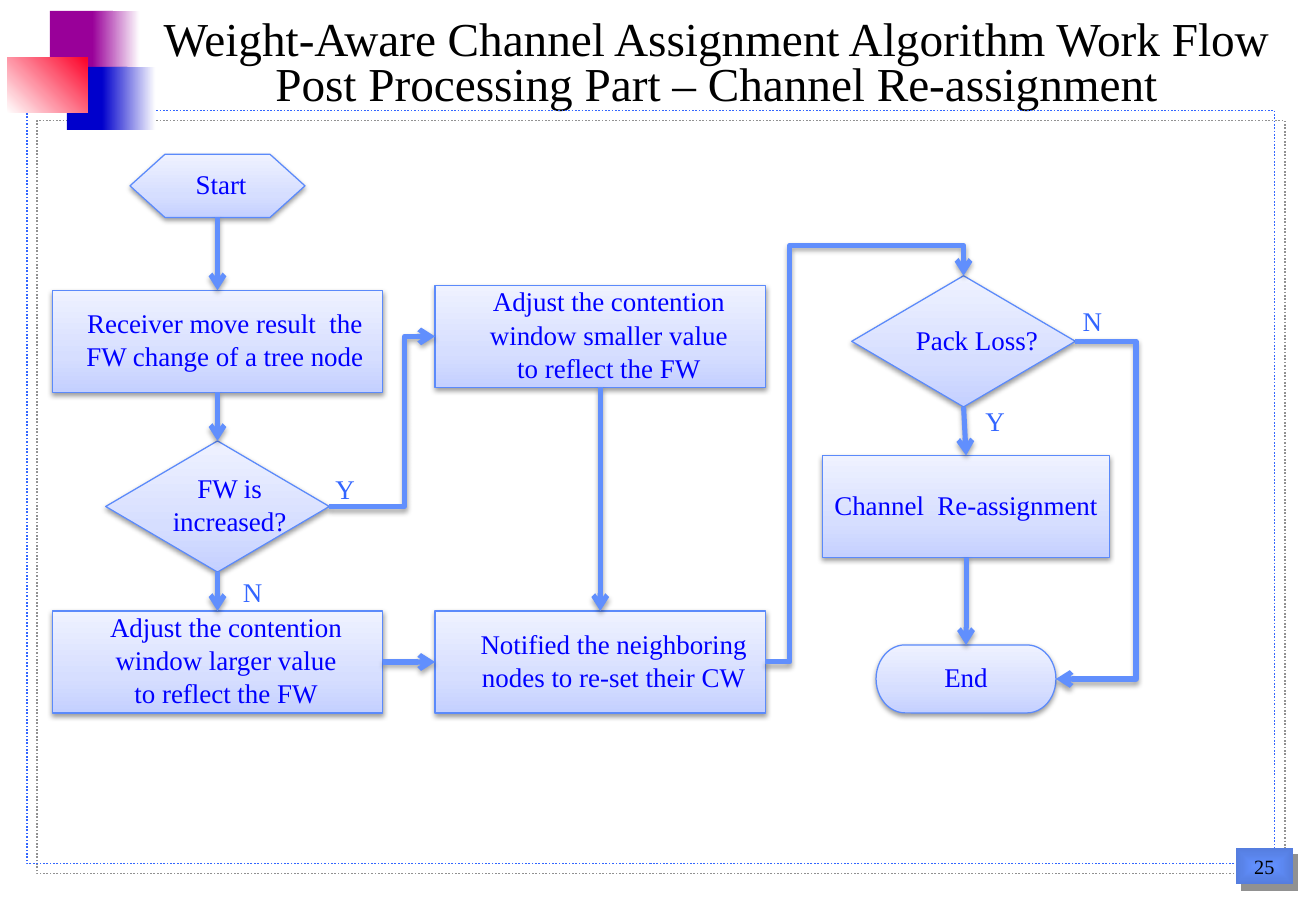
from dataclasses import dataclass

from lxml.etree import SubElement
from pptx import Presentation
from pptx.dml.color import RGBColor
from pptx.enum.dml import MSO_LINE
from pptx.enum.shapes import MSO_CONNECTOR, MSO_SHAPE
from pptx.enum.text import MSO_ANCHOR, MSO_AUTO_SIZE, PP_ALIGN
from pptx.oxml.ns import qn
from pptx.util import Pt

EMU_PER_PX = 9144
TOP, LEFT, BOTTOM, RIGHT = range(4)


@dataclass(frozen=True)
class Theme:
    font: str = "Times New Roman"
    title_size: int = 28
    body_size: int = 16
    number_size: int = 12
    black: str = "000000"
    white: str = "FFFFFF"
    box_text: str = "0000FF"
    label: str = "3366FF"
    box_line: str = "5B8AFB"
    arrow: str = "618FFD"
    badge_edge: str = "557DDE"
    purple: str = "990099"
    navy: str = "0000CC"
    red: str = "FC0128"
    box_fill: tuple = ((0, "C4D0FF"), (35, "D6DEFF"), (100, "EFF2FF"))
    # Shadows: colour, opacity %, blur pt, distance pt, angle
    box_shadow: tuple = ("000000", 38, 3.1, 1.6, 90)
    arrow_shadow: tuple = ("000000", 35, 3.1, 1.8, 90)
    frame_shadow: tuple = ("919191", 100, 0, 8.5, 45)
    badge_shadow: tuple = ("919191", 100, 0, 5, 53)


def px(*lengths):
    return [length * EMU_PER_PX for length in lengths]


def add_color(parent, color):
    return SubElement(parent, qn("a:srgbClr"), val=color)


def fill_gradient(shape, stops, angle=None):
    """Blend the stops along the angle, or out from the centre without one."""
    shape.fill.gradient()
    gradient = shape.element.spPr.find(qn("a:gradFill"))
    gradient.clear()
    stop_list = SubElement(gradient, qn("a:gsLst"))
    for position, color in stops:
        add_color(SubElement(stop_list, qn("a:gs"), pos=str(position * 1000)), color)
    if angle is None:
        centre = SubElement(gradient, qn("a:path"), path="shape")
        SubElement(centre, qn("a:fillToRect"), l="50000", t="50000", r="50000", b="50000")
    else:
        SubElement(gradient, qn("a:lin"), ang=str(angle * 60000), scaled="0")


def add_shadow(effects, color, opacity, blur, distance, angle):
    shadow = SubElement(effects, qn("a:outerShdw"), blurRad=str(Pt(blur)),
                        dist=str(Pt(distance)), dir=str(angle * 60000),
                        algn="ctr", rotWithShape="0")
    SubElement(add_color(shadow, color), qn("a:alpha"), val=str(opacity * 1000))


def write(shape, text, *, font, size, color, spacing=0.9, before=0, shift=0, inset=0):
    """Centre the lines of text, moved right by shift px."""
    frame = shape.text_frame
    frame.word_wrap = False
    frame.auto_size = MSO_AUTO_SIZE.NONE
    frame.vertical_anchor = MSO_ANCHOR.MIDDLE
    frame.margin_left, frame.margin_right = px(inset + 2 * shift, inset)
    frame.margin_top = frame.margin_bottom = 0
    frame.text = text
    for para in frame.paragraphs:
        para.alignment = PP_ALIGN.CENTER
        para.line_spacing = spacing
        para.space_before = Pt(before)
        for span in para.runs:
            span.font.name = font
            span.font.size = Pt(size)
            span.font.color.rgb = RGBColor.from_string(color)


class FlowPage:
    def __init__(self, deck, theme):
        self.theme = theme
        self.page = deck.slides.add_slide(deck.slide_layouts[5])
        self.shapes = self.page.shapes

    def title(self, text, *place):
        title = self.shapes.title
        title.left, title.top, title.width, title.height = px(*place)
        write(title, text, font=self.theme.font, size=self.theme.title_size,
              color=self.theme.black, spacing=0.8)

    def shape(self, kind, place, fill=None, angle=None, line=None, width=0.75, shadow=None):
        """Draw a preset shape; fill is one colour or a series of gradient stops."""
        shape = self.shapes.add_shape(kind, *px(*place))
        if fill is None:
            shape.fill.background()
        elif isinstance(fill, str):
            shape.fill.solid()
            shape.fill.fore_color.rgb = RGBColor.from_string(fill)
        else:
            fill_gradient(shape, fill, angle)
        if line:
            shape.line.color.rgb = RGBColor.from_string(line)
            shape.line.width = Pt(width)
        else:
            shape.line.fill.background()
        shape.shadow.inherit = False
        if shadow:
            add_shadow(shape.element.spPr.find(qn("a:effectLst")), *shadow)
        return shape

    def step(self, kind, place, text, shift=0):
        theme = self.theme
        box = self.shape(kind, place, theme.box_fill, 270, theme.box_line,
                         shadow=theme.box_shadow)
        write(box, text, font=theme.font, size=theme.body_size,
              color=theme.box_text, before=2.4, shift=shift)
        return box

    def label(self, text, left, top):
        box = self.shapes.add_textbox(*px(left, top, 36, 34))
        write(box, text, font=self.theme.font, size=self.theme.body_size,
              color=self.theme.label)

    def arrow(self, start, start_side, end, end_side, bend_x=None, bend_y=None):
        """Join two steps; the bends are where an elbow runs upright and level."""
        kind = MSO_CONNECTOR.STRAIGHT if bend_x is None else MSO_CONNECTOR.ELBOW
        arrow = self.shapes.add_connector(kind, 0, 0, 0, 0)
        arrow.begin_connect(start, start_side)
        arrow.end_connect(end, end_side)
        arrow.line.color.rgb = RGBColor.from_string(self.theme.arrow)
        arrow.line.width = Pt(3)
        properties = arrow.element.spPr
        SubElement(properties.find(qn("a:ln")), qn("a:tailEnd"), type="arrow")
        add_shadow(SubElement(properties, qn("a:effectLst")), *self.theme.arrow_shadow)
        if bend_x is None:
            return
        geometry = properties.find(qn("a:prstGeom"))
        guides = geometry.find(qn("a:avLst"))
        bends = [(bend_x, arrow.begin_x, arrow.end_x)]
        if bend_y is not None:
            geometry.set("prst", "bentConnector4")
            bends.append((bend_y, arrow.begin_y, arrow.end_y))
        for number, (bend, begin, finish) in enumerate(bends, 1):
            ratio = (bend * EMU_PER_PX - begin) / (finish - begin)
            SubElement(guides, qn("a:gd"), name=f"adj{number}",
                       fmla=f"val {round(ratio * 100000)}")

    def decorate(self, number):
        theme = self.theme
        rectangle = MSO_SHAPE.RECTANGLE
        frame = self.shape(rectangle, (22, 91, 1027, 620), line=theme.label, width=1,
                           shadow=theme.frame_shadow)
        frame.line.dash_style = MSO_LINE.ROUND_DOT
        badge = self.shape(rectangle, (1017, 698, 47, 30),
                           ((0, theme.arrow), (100, theme.badge_edge)),
                           shadow=theme.badge_shadow)
        write(badge, number, font=theme.font, size=theme.number_size,
              color=theme.black, spacing=1)
        for place, fill in (
            ((41, 9, 52, 52), theme.purple),
            ((76, 9, 39, 52), ((0, theme.purple), (100, theme.white))),
            ((55, 55, 50, 52), theme.navy),
            ((84, 55, 44, 52), ((0, theme.navy), (100, theme.white))),
        ):
            self.shape(rectangle, place, fill, 0)
        self.shape(rectangle, (6, 47, 66, 46), ((0, theme.white), (100, theme.red)), 315)


def main():
    deck = Presentation()
    deck.slide_width, deck.slide_height = px(1083, 750)
    flow = FlowPage(deck, Theme())
    flow.decorate("25")
    flow.title("Weight-Aware Channel Assignment Algorithm Work Flow\n"
               "Post Processing Part – Channel Re-assignment", 94, 20, 991, 68)

    process, decision = MSO_SHAPE.RECTANGLE, MSO_SHAPE.DIAMOND
    start = flow.step(MSO_SHAPE.FLOWCHART_PREPARATION, (107, 127, 144, 52), "Start", 3)
    receiver = flow.step(process, (43, 239, 272, 84),
                         "Receiver move result  the\nFW change of a tree node", 6)
    increased = flow.step(decision, (87, 363, 184, 108), "FW is\nincreased?", 10)
    smaller = flow.step(process, (358, 235, 272, 84),
                        "Adjust the contention\nwindow smaller value\nto reflect the FW", 7)
    larger = flow.step(process, (43, 503, 272, 84),
                       "Adjust the contention\nwindow larger value\nto reflect the FW", 7)
    notified = flow.step(process, (358, 503, 272, 84),
                         "Notified the neighboring\nnodes to re-set their CW", 11)
    loss = flow.step(decision, (701, 227, 184, 108), "Pack Loss?", 11)
    channel = flow.step(process, (677, 375, 236, 84), "Channel  Re-assignment")
    end = flow.step(MSO_SHAPE.FLOWCHART_TERMINATOR, (721, 531, 148, 56), "End")

    for upper, lower in ((start, receiver), (receiver, increased), (increased, larger),
                         (smaller, notified), (loss, channel), (channel, end)):
        flow.arrow(upper, BOTTOM, lower, TOP)
    flow.arrow(larger, RIGHT, notified, LEFT)
    flow.arrow(increased, RIGHT, smaller, LEFT, bend_x=333)
    flow.arrow(notified, RIGHT, loss, TOP, bend_x=650, bend_y=202)
    flow.arrow(loss, RIGHT, end, RIGHT, bend_x=935)

    for text, left, top in (("Y", 266, 387), ("N", 190, 472), ("Y", 801, 331), ("N", 881, 249)):
        flow.label(text, left, top)
    deck.save("out.pptx")


if __name__ == "__main__":
    main()
